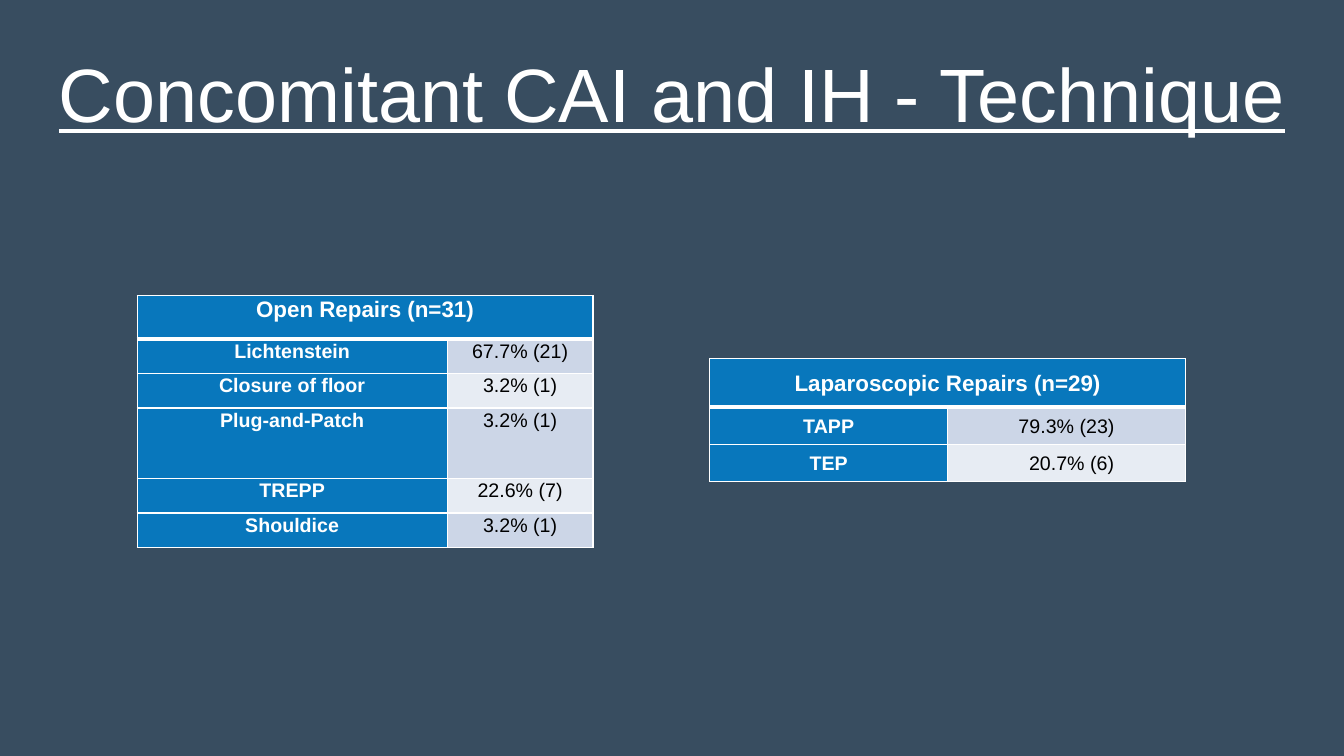
from lxml import etree
from pptx import Presentation
from pptx.dml.color import RGBColor
from pptx.enum.text import MSO_ANCHOR, PP_ALIGN
from pptx.oxml.ns import qn
from pptx.util import Inches, Pt

TOP, MIDDLE = MSO_ANCHOR.TOP, MSO_ANCHOR.MIDDLE
CENTER = PP_ALIGN.CENTER

SLATE = RGBColor(0x38, 0x4D, 0x60)
BLUE = RGBColor(0x08, 0x77, 0xBC)
BAND_DARK = RGBColor(0xCC, 0xD6, 0xE7)
BAND_LIGHT = RGBColor(0xE7, 0xEC, 0xF3)
WHITE = RGBColor(0xFF, 0xFF, 0xFF)
BLACK = RGBColor(0x00, 0x00, 0x00)

HEADER = {"size": Pt(16), "bold": True}
LABEL = {"size": Pt(14), "bold": True}
VALUE = {"size": Pt(14), "bold": False}


class SlideBuilder:
    """Holds the style and the slide; lengths are percentages of its size."""

    font_name = "Arial"

    def __init__(self, deck):
        self.deck = deck
        self.page = deck.slides.add_slide(deck.slide_layouts[6])
        fill = self.page.background.fill
        fill.solid()
        fill.fore_color.rgb = SLATE

    def across(self, share):
        return round(self.deck.slide_width * share / 100)

    def down(self, share):
        return round(self.deck.slide_height * share / 100)

    def add_text(self, frame, text, color, spacing, font):
        para = frame.paragraphs[0]
        para.alignment = CENTER
        para.line_spacing = spacing
        span = para.add_run()
        span.text = text
        for name, value in {"name": self.font_name, **font}.items():
            setattr(span.font, name, value)
        span.font.color.rgb = color

    def title(self, text, top, height):
        box = self.page.shapes.add_textbox(
            0, self.down(top), self.deck.slide_width, self.down(height))
        frame = box.text_frame
        frame.word_wrap = True
        frame.vertical_anchor = MIDDLE
        self.add_text(frame, text, WHITE, 0.9, {"size": Pt(54), "underline": True})

    def borders(self, cell, bottom):
        properties = cell._tc.get_or_add_tcPr()
        sides = {"lnL": 1, "lnR": 1, "lnT": 1, "lnB": bottom}
        for position, (side, width) in enumerate(sides.items()):
            line = etree.Element(qn(f"a:{side}"), w=str(Pt(width)))
            fill = etree.SubElement(line, qn("a:solidFill"))
            etree.SubElement(fill, qn("a:srgbClr"), val=str(WHITE))
            properties.insert(position, line)

    def cell(self, cell, text, fill, color, font, anchor, bottom=1, indent=0):
        cell.fill.solid()
        cell.fill.fore_color.rgb = fill
        margins = {"margin_left": Inches(0.07 + indent),
                   "margin_right": Inches(0.07),
                   "margin_top": 0, "margin_bottom": 0}
        for name, value in {**margins, "vertical_anchor": anchor}.items():
            setattr(cell, name, value)
        self.borders(cell, bottom)
        if text:
            self.add_text(cell.text_frame, text, color, 1.07, font)

    def repairs_table(self, heading, repairs, left, top, widths, heights, anchor):
        table = self.page.shapes.add_table(
            len(heights), len(widths), self.across(left), self.down(top),
            self.across(sum(widths)), self.down(sum(heights))).table
        table.horz_banding = False
        for column, width in zip(table.columns, widths):
            column.width = self.across(width)
        for row, height in zip(table.rows, heights):
            row.height = self.down(height)

        # Header across both columns, with a heavier rule below
        table.cell(0, 0).merge(table.cell(0, 1))
        for column, text in enumerate((heading, "")):
            self.cell(table.cell(0, column), text, BLUE, WHITE, HEADER, anchor, bottom=3)

        # Technique and share, on alternating bands
        for row, (technique, share, indent) in enumerate(repairs, start=1):
            band = BAND_DARK if row % 2 else BAND_LIGHT
            self.cell(table.cell(row, 0), technique, BLUE, WHITE, LABEL, anchor)
            self.cell(table.cell(row, 1), share, band, BLACK, VALUE, anchor, indent=indent)


def main():
    deck = Presentation()
    deck.slide_width, deck.slide_height = Inches(13.33), Inches(7.5)
    builder = SlideBuilder(deck)

    # Title
    builder.title("Concomitant CAI and IH - Technique", 3.33, 19.33)

    # Open repairs
    builder.repairs_table(
        "Open Repairs (n=31)",
        [("Lichtenstein", "67.7% (21)", 0),
         ("Closure of floor", "3.2% (1)", 0),
         ("Plug-and-Patch", "3.2% (1)", 0),
         ("TREPP", "22.6% (7)", 0),
         ("Shouldice", "3.2% (1)", 0)],
        10.2, 39.07, (23.08, 10.85), (5.8, 4.55, 4.55, 9.35, 4.55, 4.55), TOP)

    # Laparoscopic repairs
    builder.repairs_table(
        "Laparoscopic Repairs (n=29)",
        [("TAPP", "79.3% (23)", 0),
         ("TEP", "20.7% (6)", 0.1)],
        52.81, 47.47, (17.7, 17.7), (6.4, 4.93, 4.93), MIDDLE)

    deck.save("out.pptx")


if __name__ == "__main__":
    main()
